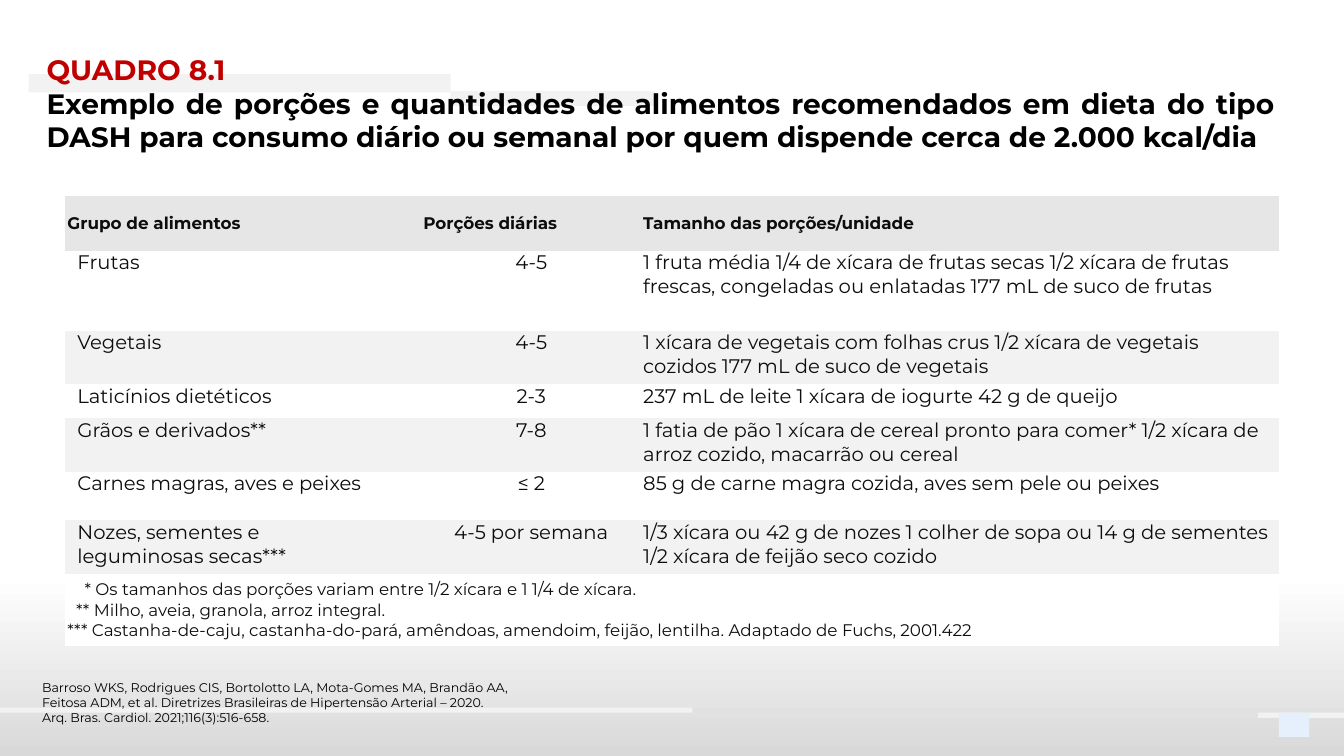
from pptx import Presentation
from pptx import util as u
from pptx.dml import color as dml
from pptx.enum import shapes, text
from pptx.oxml import ns

FONT = "Montserrat"
INK = "0D0D0D"
NO_GRID_STYLE = "{2D5ABB26-0587-4C30-8999-92F81FD0307C}"

COLUMN_WIDTHS = [8.97, 5.54, 16.08]
ROW_HEIGHTS = [1.37, 2.01, 1.35, 0.86, 1.35, 1.22, 1.35, 1.83]
HEADINGS = ["Grupo de alimentos", "Porções diárias", "Tamanho das porções/unidade"]
FOODS = [
    ("Frutas", "4-5",
     "1 fruta média 1/4 de xícara de frutas secas 1/2 xícara de frutas frescas, "
     "congeladas ou enlatadas 177 mL de suco de frutas"),
    ("Vegetais", "4-5",
     "1 xícara de vegetais com folhas crus 1/2 xícara de vegetais cozidos "
     "177 mL de suco de vegetais"),
    ("Laticínios dietéticos", "2-3",
     "237 mL de leite 1 xícara de iogurte 42 g de queijo"),
    ("Grãos e derivados**", "7-8",
     "1 fatia de pão 1 xícara de cereal pronto para comer* 1/2 xícara de arroz "
     "cozido, macarrão ou cereal"),
    ("Carnes magras, aves e peixes", "≤ 2",
     "85 g de carne magra cozida, aves sem pele ou peixes"),
    ("Nozes, sementes e\nleguminosas secas***", "4-5 por semana",
     "1/3 xícara ou 42 g de nozes 1 colher de sopa ou 14 g de sementes "
     "1/2 xícara de feijão seco cozido"),
]
FOOTNOTES = [
    ("* Os tamanhos das porções variam entre 1/2 xícara e 1 1/4 de xícara.", 0.43),
    ("** Milho, aveia, granola, arroz integral.", 0.22),
    ("*** Castanha-de-caju, castanha-do-pará, amêndoas, amendoim, feijão, lentilha. "
     "Adaptado de Fuchs, 2001.422", 0),
]
CITATION = (
    "Barroso WKS, Rodrigues CIS, Bortolotto LA, Mota-Gomes MA, Brandão AA,\n"
    "Feitosa ADM, et al. Diretrizes Brasileiras de Hipertensão Arterial – 2020.\n"
    "Arq. Bras. Cardiol. 2021;116(3):516-658."
)


def rgb(value):
    return dml.RGBColor.from_string(value)


def write(frame, content, size=14, color=INK, bold=False,
          align=text.PP_ALIGN.LEFT, indent=0):
    for line in content.split("\n"):
        paragraph = frame.paragraphs[-1]
        if paragraph.runs:
            paragraph = frame.add_paragraph()
        paragraph.alignment = align
        if indent:
            paragraph._p.get_or_add_pPr().set("marL", str(u.Cm(indent)))
        run = paragraph.add_run()
        run.text = line
        run.font.name = FONT
        run.font.size = u.Pt(size)
        run.font.bold = bold
        run.font.color.rgb = rgb(color)


def add_bar(slide, box, color="F2F2F2"):
    bar = slide.shapes.add_shape(
        shapes.MSO_SHAPE.RECTANGLE, *(u.Cm(length) for length in box))
    bar.shadow.inherit = False
    bar.fill.solid()
    bar.fill.fore_color.rgb = rgb(color)
    bar.line.fill.background()


def add_backdrop(slide, width, height):
    fill = slide.background.fill
    fill.gradient()
    fill.gradient_angle = 270
    for stop, (position, color) in zip(
            fill.gradient_stops, [(0.76, "FFFFFF"), (1, "D9D9D9")]):
        stop.position = position
        stop.color.rgb = rgb(color)
    add_bar(slide, (0.72, 1.87, 10.64, 0.46))
    add_bar(slide, (11.35, 2.29, 5.16, 0.38))
    add_bar(slide, (0, height - 1.22, 17.45, 0.13))
    add_bar(slide, (width - 2.16, height - 1.09, 2.16, 0.13))
    add_bar(slide, (width - 1.64, height - 1.09, 0.76, 0.61), "E5F0FC")


def add_heading(slide, left, top, width, height):
    heading = slide.shapes.title
    heading.left, heading.top = u.Cm(left), u.Cm(top)
    heading.width, heading.height = u.Cm(width), u.Cm(height)
    frame = heading.text_frame
    frame.word_wrap = True
    frame.auto_size = text.MSO_AUTO_SIZE.NONE
    frame.vertical_anchor = text.MSO_ANCHOR.TOP
    style = {"size": 20, "bold": True, "align": text.PP_ALIGN.JUSTIFY}
    write(frame, "QUADRO 8.1", color="C00000", **style)
    write(frame, "Exemplo de porções e quantidades de alimentos recomendados em "
          "dieta do tipo DASH para consumo diário ou semanal por quem dispende "
          "cerca de 2.000 kcal/dia", color="000000", **style)
    heading.element.getparent().append(heading.element)


def format_cell(cell, color, anchor=text.MSO_ANCHOR.TOP):
    cell.fill.solid()
    cell.fill.fore_color.rgb = rgb(color)
    cell.margin_left = cell.margin_right = u.Cm(0.05)
    cell.margin_top = cell.margin_bottom = 0
    cell.vertical_anchor = anchor
    return cell.text_frame


def add_portions_table(slide, left, top):
    portions = slide.shapes.add_table(
        len(ROW_HEIGHTS), len(COLUMN_WIDTHS), u.Cm(left), u.Cm(top),
        u.Cm(sum(COLUMN_WIDTHS)), u.Cm(sum(ROW_HEIGHTS))).table
    portions.horz_banding = False
    portions._tbl.tblPr.find(ns.qn("a:tableStyleId")).text = NO_GRID_STYLE
    for column, width in zip(portions.columns, COLUMN_WIDTHS):
        column.width = u.Cm(width)
    for row, height in zip(portions.rows, ROW_HEIGHTS):
        row.height = u.Cm(height)

    for column, heading in enumerate(HEADINGS):
        frame = format_cell(portions.cell(0, column), "E6E6E6", text.MSO_ANCHOR.MIDDLE)
        write(frame, heading, size=12, bold=True)

    column_styles = [{"indent": 0.25}, {"align": text.PP_ALIGN.CENTER}, {}]
    for row, food in enumerate(FOODS, start=1):
        band = "FFFFFF" if row % 2 else "F2F2F2"
        for column, (value, style) in enumerate(zip(food, column_styles)):
            write(format_cell(portions.cell(row, column), band), value, **style)

    last = len(ROW_HEIGHTS) - 1
    notes = portions.cell(last, 0)
    notes.merge(portions.cell(last, len(COLUMN_WIDTHS) - 1))
    frame = format_cell(notes, "FFFFFF", text.MSO_ANCHOR.MIDDLE)
    for footnote, indent in FOOTNOTES:
        write(frame, footnote, size=12, indent=indent)


def add_citation(slide, *box):
    citation = slide.shapes.add_textbox(*(u.Cm(length) for length in box))
    citation.text_frame.word_wrap = True
    write(citation.text_frame, CITATION, size=9, color="000000")


def main():
    width, height = 33.87, 19.05
    deck = Presentation()
    deck.slide_width, deck.slide_height = u.Cm(width), u.Cm(height)
    slide = deck.slides.add_slide(deck.slide_layouts.get_by_name("Title Only"))
    add_backdrop(slide, width, height)
    add_portions_table(slide, 1.65, 4.95)
    add_heading(slide, 0.92, 1.2, 31.47, 2.82)
    add_citation(slide, 0.81, 17, 17, 1.42)
    deck.save("out.pptx")


if __name__ == "__main__":
    main()
